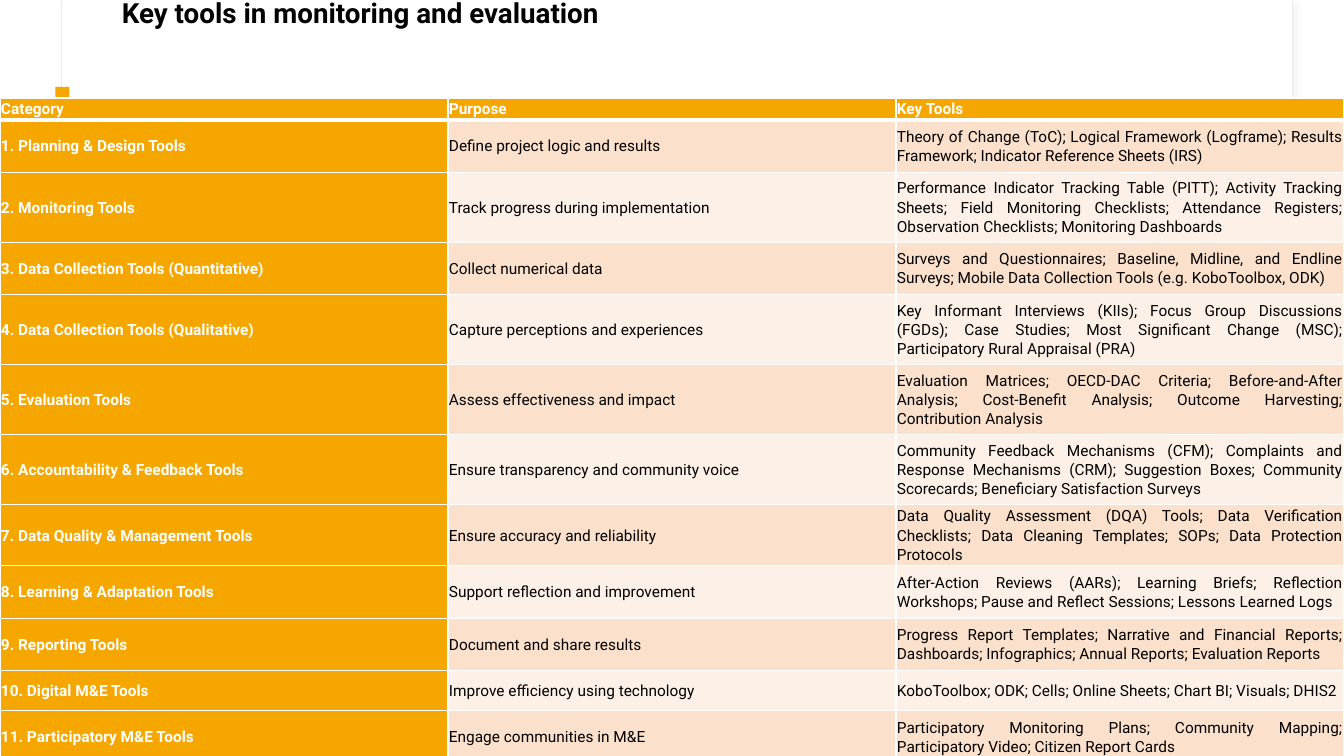
from dataclasses import dataclass
from typing import Optional

from lxml.etree import SubElement
from pptx import Presentation
from pptx.dml.color import RGBColor as Rgb
from pptx.enum.shapes import MSO_SHAPE as Preset
from pptx.enum.text import MSO_ANCHOR as Anchor, PP_ALIGN as Align
from pptx.oxml.ns import qn
from pptx.util import Pt

COLORS = {
    "white": "FFFFFF",
    "black": "000000",
    "orange": "F5A700",
    "peach": "FBE1CC",
    "cream": "FDF1E7",
    "frame": "E9E9E9",
    "shade": "D9D9D9",
}
FONT = "Roboto"
SLIDE_WIDTH, SLIDE_HEIGHT = 960, 540
TABLE_TOP = 70
HEADER_HEIGHT = 14.5
ONE_LINE, TWO_LINES, THREE_LINES = 28.5, 37.5, 50
CELL_INSET = 0.7
GRID_WIDTH, HEADER_RULE = 1, 3


@dataclass(frozen=True)
class Panel:
    left: float
    top: float
    width: float
    height: float
    fill: str
    outline: Optional[str] = None
    shaded: bool = False


@dataclass(frozen=True)
class ToolGroup:
    category: str
    purpose: str
    tools: str
    height: float = TWO_LINES


PANELS = [
    Panel(44, 0, 879, 159, "white", "frame", True),
    Panel(44.5, 0, 878.5, 158.5, "white"),
    Panel(39.5, 62, 10, 55.5, "orange"),
]

HEADER = ToolGroup("Category", "Purpose", "Key Tools", HEADER_HEIGHT)
GROUPS = [
    ToolGroup("1. Planning & Design Tools", "Define project logic and results",
              "Theory of Change (ToC); Logical Framework (Logframe); Results Framework; "
              "Indicator Reference Sheets (IRS)"),
    ToolGroup("2. Monitoring Tools", "Track progress during implementation",
              "Performance Indicator Tracking Table (PITT); Activity Tracking Sheets; "
              "Field Monitoring Checklists; Attendance Registers; "
              "Observation Checklists; Monitoring Dashboards", THREE_LINES),
    ToolGroup("3. Data Collection Tools (Quantitative)", "Collect numerical data",
              "Surveys and Questionnaires; Baseline, Midline, and Endline Surveys; "
              "Mobile Data Collection Tools (e.g. KoboToolbox, ODK)"),
    ToolGroup("4. Data Collection Tools (Qualitative)", "Capture perceptions and experiences",
              "Key Informant Interviews (KIIs); Focus Group Discussions (FGDs); "
              "Case Studies; Most Significant Change (MSC); "
              "Participatory Rural Appraisal (PRA)", THREE_LINES),
    ToolGroup("5. Evaluation Tools", "Assess effectiveness and impact",
              "Evaluation Matrices; OECD-DAC Criteria; Before-and-After Analysis; "
              "Cost-Benefit Analysis; Outcome Harvesting; Contribution Analysis", THREE_LINES),
    ToolGroup("6. Accountability & Feedback Tools", "Ensure transparency and community voice",
              "Community Feedback Mechanisms (CFM); Complaints and Response Mechanisms (CRM); "
              "Suggestion Boxes; Community Scorecards; Beneficiary Satisfaction Surveys",
              THREE_LINES),
    ToolGroup("7. Data Quality & Management Tools", "Ensure accuracy and reliability",
              "Data Quality Assessment (DQA) Tools; Data Verification Checklists; "
              "Data Cleaning Templates; SOPs; Data Protection Protocols", 42),
    ToolGroup("8. Learning & Adaptation Tools", "Support reflection and improvement",
              "After-Action Reviews (AARs); Learning Briefs; Reflection Workshops; "
              "Pause and Reflect Sessions; Lessons Learned Logs"),
    ToolGroup("9. Reporting Tools", "Document and share results",
              "Progress Report Templates; Narrative and Financial Reports; Dashboards; "
              "Infographics; Annual Reports; Evaluation Reports"),
    ToolGroup("10. Digital M&E Tools", "Improve efficiency using technology",
              "KoboToolbox; ODK; Cells; Online Sheets; Chart BI; Visuals; DHIS2", ONE_LINE),
    ToolGroup("11. Participatory M&E Tools", "Engage communities in M&E",
              "Participatory Monitoring Plans; Community Mapping; "
              "Participatory Video; Citizen Report Cards"),
]


def rgb(name: str) -> Rgb:
    return Rgb.from_string(COLORS[name])


def style_text(paragraph, size: float, color: str, bold: bool, spacing: float) -> None:
    paragraph.line_spacing = spacing
    font = paragraph.font
    font.name, font.size, font.bold = FONT, Pt(size), bold
    font.color.rgb = rgb(color)


def draw_panel(slide, panel: Panel) -> None:
    shape = slide.shapes.add_shape(Preset.RECTANGLE, Pt(panel.left), Pt(panel.top),
                                   Pt(panel.width), Pt(panel.height))
    shape.fill.solid()
    shape.fill.fore_color.rgb = rgb(panel.fill)
    if panel.outline:
        shape.line.color.rgb = rgb(panel.outline)
        shape.line.width = Pt(0.75)
    else:
        shape.line.fill.background()
    shape.shadow.inherit = False
    if panel.shaded:
        effects = shape._element.spPr.find(qn("a:effectLst"))
        shadow = SubElement(effects, qn("a:outerShdw"), blurRad=str(Pt(4)),
                            dist=str(Pt(3)), dir="2700000")
        tint = SubElement(shadow, qn("a:srgbClr"), val=COLORS["shade"])
        SubElement(tint, qn("a:alpha"), val="30000")


def draw_title(slide, text: str) -> None:
    title = slide.shapes.add_textbox(Pt(80), Pt(0), Pt(800), Pt(21)).text_frame
    title.word_wrap = True
    title.margin_top = title.margin_bottom = 0
    title.vertical_anchor = Anchor.MIDDLE
    title.text = text
    style_text(title.paragraphs[0], 19.8, "black", True, 0.9)


def draw_borders(cell, top: float, bottom: float) -> None:
    widths = {"L": GRID_WIDTH, "R": GRID_WIDTH, "T": top, "B": bottom}
    for side, width in widths.items():
        edge = SubElement(cell._tc.get_or_add_tcPr(), qn(f"a:ln{side}"), w=str(Pt(width)))
        paint = SubElement(edge, qn("a:solidFill"))
        SubElement(paint, qn("a:srgbClr"), val=COLORS["white"])


def fill_cell(cell, text: str, row: int, column: int) -> None:
    heading = row == 0 or column == 0
    draw_borders(cell, HEADER_RULE if row == 1 else GRID_WIDTH,
                 HEADER_RULE if row == 0 else GRID_WIDTH)
    cell.fill.solid()
    cell.fill.fore_color.rgb = rgb("orange" if heading else "peach" if row % 2 else "cream")
    cell.margin_left = cell.margin_right = Pt(CELL_INSET)
    cell.margin_top = cell.margin_bottom = Pt(CELL_INSET)
    cell.vertical_anchor = Anchor.MIDDLE
    cell.text = text
    paragraph = cell.text_frame.paragraphs[0]
    paragraph.alignment = Align.JUSTIFY
    style_text(paragraph, 11, "white" if heading else "black", heading, 1.07)


def draw_tools_table(slide, groups: list[ToolGroup]) -> None:
    total = sum(group.height for group in groups)
    table = slide.shapes.add_table(len(groups), 3, Pt(0), Pt(TABLE_TOP),
                                   Pt(SLIDE_WIDTH), Pt(total)).table
    table.first_col = True
    table.horz_banding = False
    for row, group in enumerate(groups):
        table.rows[row].height = Pt(group.height)
        for column, text in enumerate((group.category, group.purpose, group.tools)):
            fill_cell(table.cell(row, column), text, row, column)


def main() -> None:
    deck = Presentation()
    deck.slide_width, deck.slide_height = Pt(SLIDE_WIDTH), Pt(SLIDE_HEIGHT)
    slide = deck.slides.add_slide(deck.slide_layouts[6])
    for panel in PANELS:
        draw_panel(slide, panel)
    draw_title(slide, "Key tools in monitoring and evaluation")
    draw_tools_table(slide, [HEADER, *GROUPS])
    deck.save("out.pptx")


if __name__ == "__main__":
    main()
